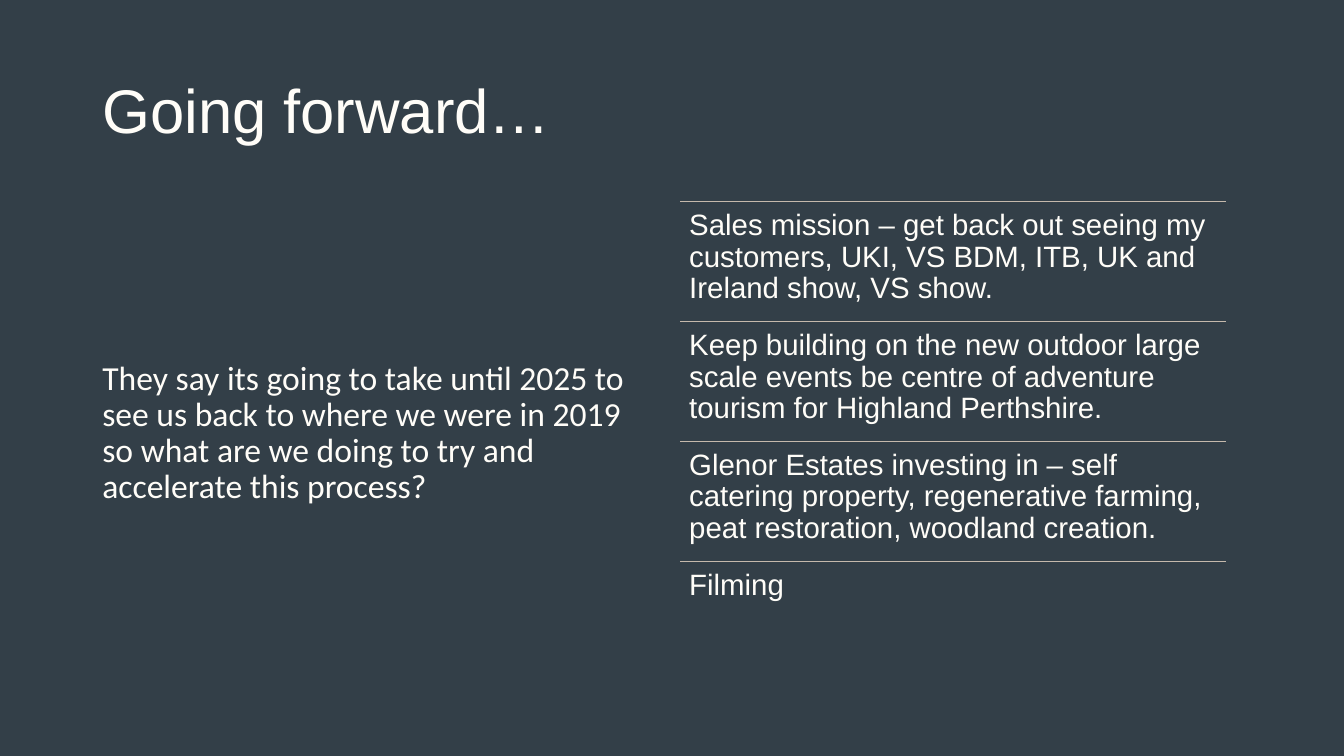
from lxml.etree import SubElement
from pptx import Presentation
from pptx.dml.color import RGBColor
from pptx.enum.shapes import MSO_CONNECTOR
from pptx.enum.text import MSO_ANCHOR
from pptx.oxml.ns import qn
from pptx.util import Cm, Pt

BACKGROUND = "333F48"
CREAM = "FFFDF8"
RULE = "C5B9AC"

ACTIONS = [
    "Sales mission – get back out seeing my customers, UKI, VS BDM, ITB, UK and Ireland show, VS show.",
    "Keep building on the new outdoor large scale events be centre of adventure tourism for Highland Perthshire.",
    "Glenor Estates investing in – self catering property, regenerative farming, peat restoration, woodland creation.",
    "Filming",
]
QUESTION = (
    "They say its going to take until 2025 to see us back to where we were in 2019 "
    "so what are we doing to try and accelerate this process?"
)


def colour(hex_string):
    """Turn a hex string into a colour."""
    return RGBColor.from_string(hex_string)


def add_text(slide, box, words, size, font, insets=(0.25, 0.13), anchor=MSO_ANCHOR.TOP):
    """Write one paragraph into a box given in centimetres."""
    frame = slide.shapes.add_textbox(*map(Cm, box)).text_frame
    frame.word_wrap = True
    frame.vertical_anchor = anchor
    side, top = insets
    frame.margin_left = frame.margin_right = Cm(side)
    frame.margin_top = Cm(top)
    paragraph = frame.paragraphs[0]
    paragraph.line_spacing = 0.9
    run = paragraph.add_run()
    run.text = words
    run.font.size = Pt(size)
    run.font.name = font
    run.font.color.rgb = colour(CREAM)


def add_rule(slide, left, top, width):
    """Draw a thin horizontal rule."""
    rule = slide.shapes.add_connector(
        MSO_CONNECTOR.STRAIGHT, Cm(left), Cm(top), Cm(left + width), Cm(top)
    )
    rule.line.color.rgb = colour(RULE)
    rule.line.width = Pt(0.5)
    SubElement(rule._element.spPr, qn("a:effectLst"))


def add_title(slide, box):
    """Place the slide title, centred vertically in its box."""
    add_text(slide, box, "Going forward…", 44, "Arial", anchor=MSO_ANCHOR.MIDDLE)


def add_question(slide, box):
    """Place the opening question a third of the way down its box."""
    add_text(slide, box, QUESTION, 24, "Calibri", insets=(0.25, box[3] / 3))


def add_actions(slide, box):
    """Stack the actions in equal rows, each under a rule."""
    left, top, width, height = box
    row_height = height / len(ACTIONS)
    for index, action in enumerate(ACTIONS):
        row_top = top + index * row_height
        add_rule(slide, left, row_top, width)
        row = (left, row_top, width, row_height)
        add_text(slide, row, action, 21, "Arial", insets=(0.22, 0.22))


def main():
    """Build and save the slide."""
    presentation = Presentation()
    presentation.slide_width = Cm(33.87)
    presentation.slide_height = Cm(19.05)
    slide = presentation.slides.add_slide(presentation.slide_layouts[6])
    slide.background.fill.solid()
    slide.background.fill.fore_color.rgb = colour(BACKGROUND)
    add_title(slide, (2.33, 1.01, 28.58, 3.68))
    add_question(slide, (2.33, 5.07, 14.4, 12.09))
    add_actions(slide, (17.15, 5.07, 13.74, 12.09))
    presentation.save("out.pptx")


if __name__ == "__main__":
    main()
